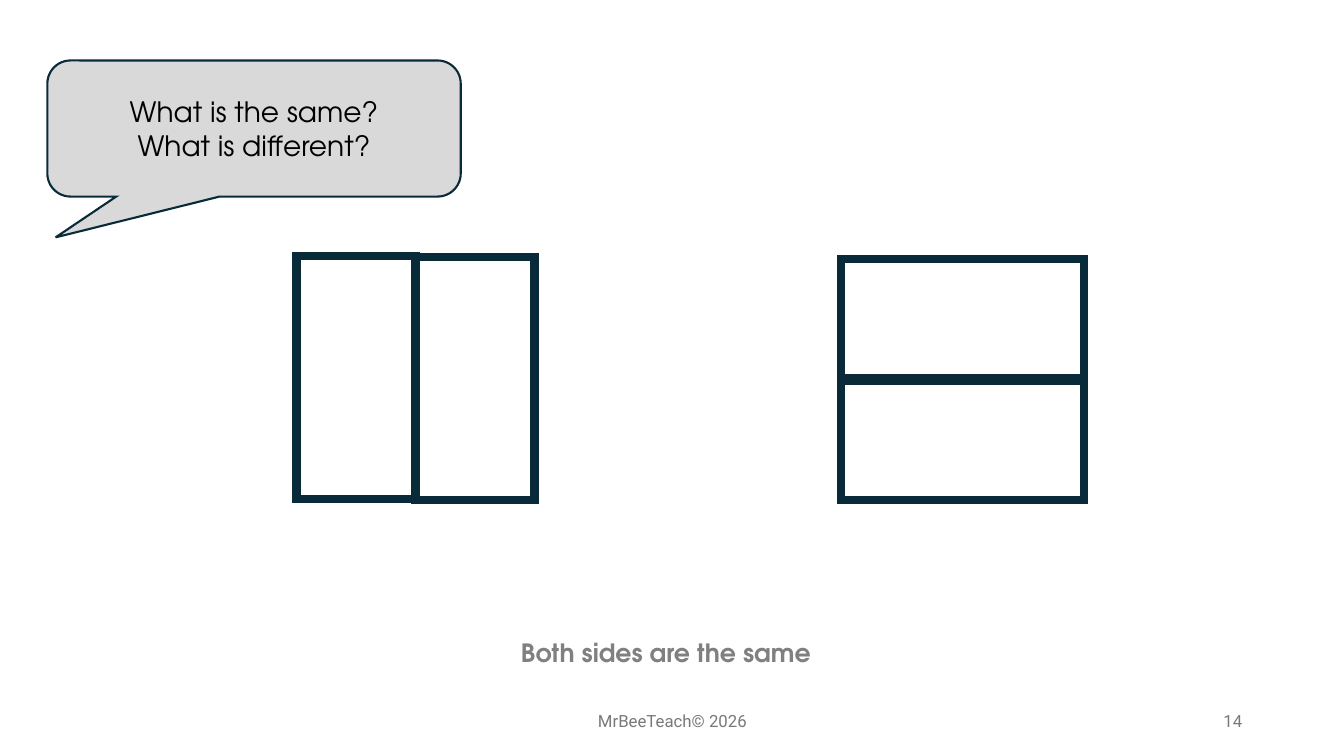
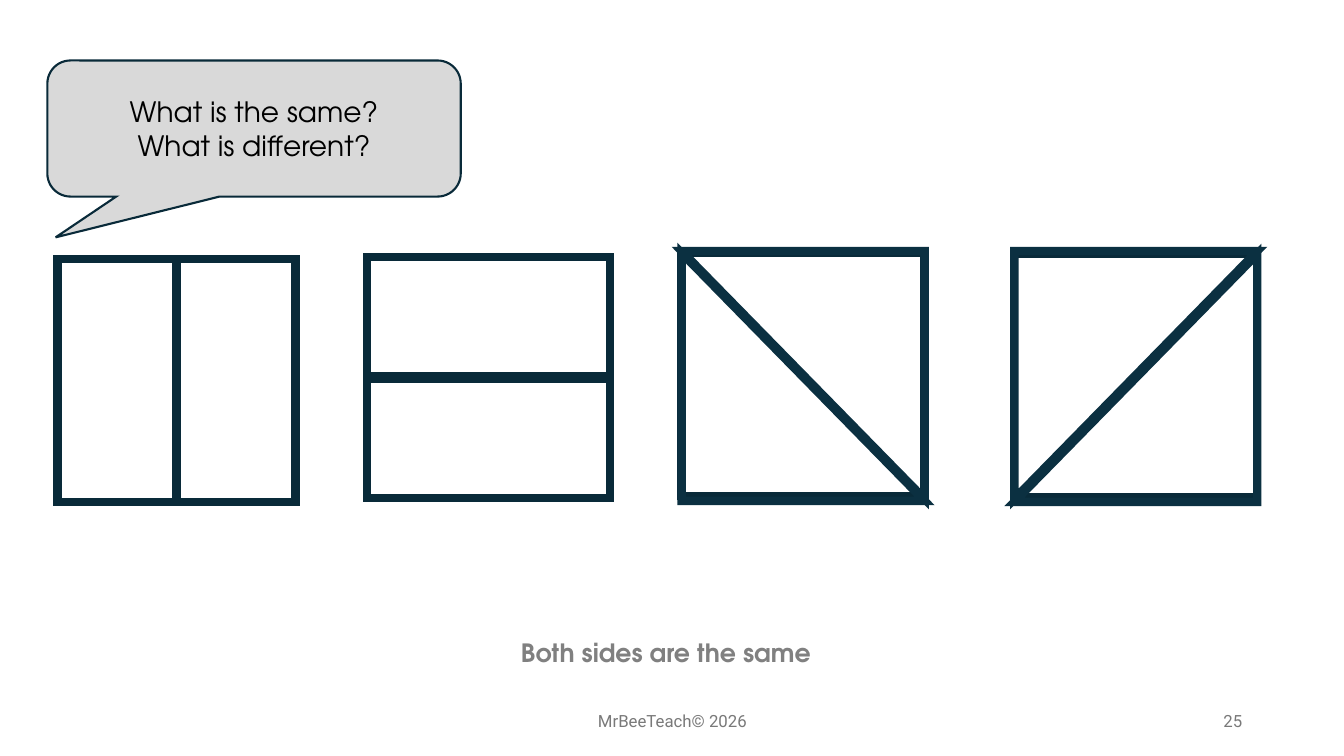
import pptx
import pptx.util
import pptx.dml.color
import pptx.enum.shapes
import pptx.enum.text
import pptx.oxml.ns
import lxml.etree
from dataclasses import dataclass

EMU_PER_PX = 9144  # 100 px to the inch
SLIDE_SIZE = (1333, 750)
SHAPES = pptx.enum.shapes.MSO_SHAPE
ALIGN = pptx.enum.text.PP_ALIGN
ANCHOR = pptx.enum.text.MSO_ANCHOR


@dataclass(frozen=True)
class Theme:
    outline: str = "092A39"
    triangle_outline: str = "0B3041"
    bubble: str = "D9D9D9"
    ink: str = "000000"
    caption: str = "808080"
    footer: str = "797979"
    heading_font: str = "TeX Gyre Adventor"
    footer_font: str = "Roboto"
    question_size: int = 20
    caption_size: int = 18
    footer_size: int = 12
    thick: float = 6
    thin: float = 1.5


THEME = Theme()

# Content
QUESTIONS = ["What is the same?", "What is different?"]
CAPTION = "Both sides are the same"
FOOTER = "MrBeeTeach© 2026"
SLIDES = [
    {
        "number": "14",
        "squares": [
            {"split": "vertical", "left": 294, "top": 254, "stagger": 1},
            {"split": "horizontal", "left": 834, "top": 257},
        ],
    },
    {
        "number": "25",
        "squares": [
            {"split": "vertical", "left": 57, "top": 257},
            {"split": "horizontal", "left": 364, "top": 255},
            {"split": "diagonal", "left": 676, "top": 251, "corner": 0},
            {"split": "diagonal", "left": 1006, "top": 252, "corner": 1},
        ],
    },
]

# Layout
CALLOUT_BOX = (47, 60, 410, 135)
CALLOUT_ADJUSTMENTS = (-0.48, 0.8, 0.17)
CAPTION_BOX = (327, 627, 667, 40)
FOOTER_BOX = (442, 695, 450, 40)
NUMBER_BOX = (942, 695, 300, 40)
SIDE = 241
HALF = 118
HORIZONTAL_STEP = 121
TRIANGLE_HEIGHT = 246
UPPER_TRIANGLE_TOP = 249


def emu(box):
    return [pptx.util.Emu(value * EMU_PER_PX) for value in box]


def color(value):
    return pptx.dml.color.RGBColor.from_string(value)


def write_text(shape, lines, *, font, size, ink, bold=False,
               align=ALIGN.CENTER, anchor=ANCHOR.MIDDLE):
    frame = shape.text_frame
    frame.word_wrap = True
    frame.auto_size = pptx.enum.text.MSO_AUTO_SIZE.NONE
    frame.vertical_anchor = anchor
    for index, line in enumerate(lines):
        paragraph = frame.add_paragraph() if index else frame.paragraphs[0]
        paragraph.alignment = align
        run = paragraph.add_run()
        run.text = line
        run.font.name = font
        run.font.size = pptx.util.Pt(size)
        run.font.bold = bold
        run.font.color.rgb = color(ink)


def add_outline(slide, kind, box, *, line=THEME.outline, width=THEME.thick,
                fill=None, rotation=0, adjustments=()):
    shape = slide.shapes.add_shape(kind, *emu(box))
    shape.shadow.inherit = False
    shape.rotation = rotation
    for index, value in enumerate(adjustments):
        shape.adjustments[index] = value
    if fill:
        shape.fill.solid()
        shape.fill.fore_color.rgb = color(fill)
    else:
        shape.fill.background()
    shape.line.color.rgb = color(line)
    shape.line.width = pptx.util.Pt(width)
    # Sharp corners
    outline = shape.line.fill._xPr
    lxml.etree.SubElement(outline, pptx.oxml.ns.qn("a:miter"), lim="800000")
    return shape


def add_split_square(slide, split, left, top, stagger=0, corner=0):
    if split == "vertical":
        for index in range(2):
            add_outline(slide, SHAPES.RECTANGLE,
                        (left + index * HALF, top + index * stagger, HALF, SIDE))
    elif split == "horizontal":
        for index in range(2):
            add_outline(slide, SHAPES.RECTANGLE,
                        (left, top + index * HORIZONTAL_STEP, SIDE, HALF))
    else:
        add_outline(slide, SHAPES.RECTANGLE, (left, top, SIDE, SIDE))
        for triangle_top, rotation in ((top, 0), (UPPER_TRIANGLE_TOP, 180)):
            add_outline(slide, SHAPES.ISOSCELES_TRIANGLE,
                        (left, triangle_top, SIDE, TRIANGLE_HEIGHT),
                        line=THEME.triangle_outline, rotation=rotation,
                        adjustments=(corner,))


def add_frame(slide, number):
    # Caption
    caption = slide.shapes.title
    caption.left, caption.top, caption.width, caption.height = emu(CAPTION_BOX)
    write_text(caption, [CAPTION], font=THEME.heading_font,
               size=THEME.caption_size, ink=THEME.caption, bold=True,
               anchor=ANCHOR.TOP)
    # Speech bubble
    callout = add_outline(slide, SHAPES.ROUNDED_RECTANGULAR_CALLOUT, CALLOUT_BOX,
                          width=THEME.thin, fill=THEME.bubble,
                          adjustments=CALLOUT_ADJUSTMENTS)
    write_text(callout, QUESTIONS, font=THEME.heading_font,
               size=THEME.question_size, ink=THEME.ink)
    # Footer and slide number
    for text, box, align in ((FOOTER, FOOTER_BOX, ALIGN.CENTER),
                             (number, NUMBER_BOX, ALIGN.RIGHT)):
        write_text(slide.shapes.add_textbox(*emu(box)), [text],
                   font=THEME.footer_font, size=THEME.footer_size,
                   ink=THEME.footer, align=align)


def main():
    presentation = pptx.Presentation()
    presentation.slide_width, presentation.slide_height = emu(SLIDE_SIZE)
    title_only = presentation.slide_layouts[5]
    for content in SLIDES:
        slide = presentation.slides.add_slide(title_only)
        add_frame(slide, content["number"])
        for square in content["squares"]:
            add_split_square(slide, **square)
    presentation.save("out.pptx")


if __name__ == "__main__":
    main()
